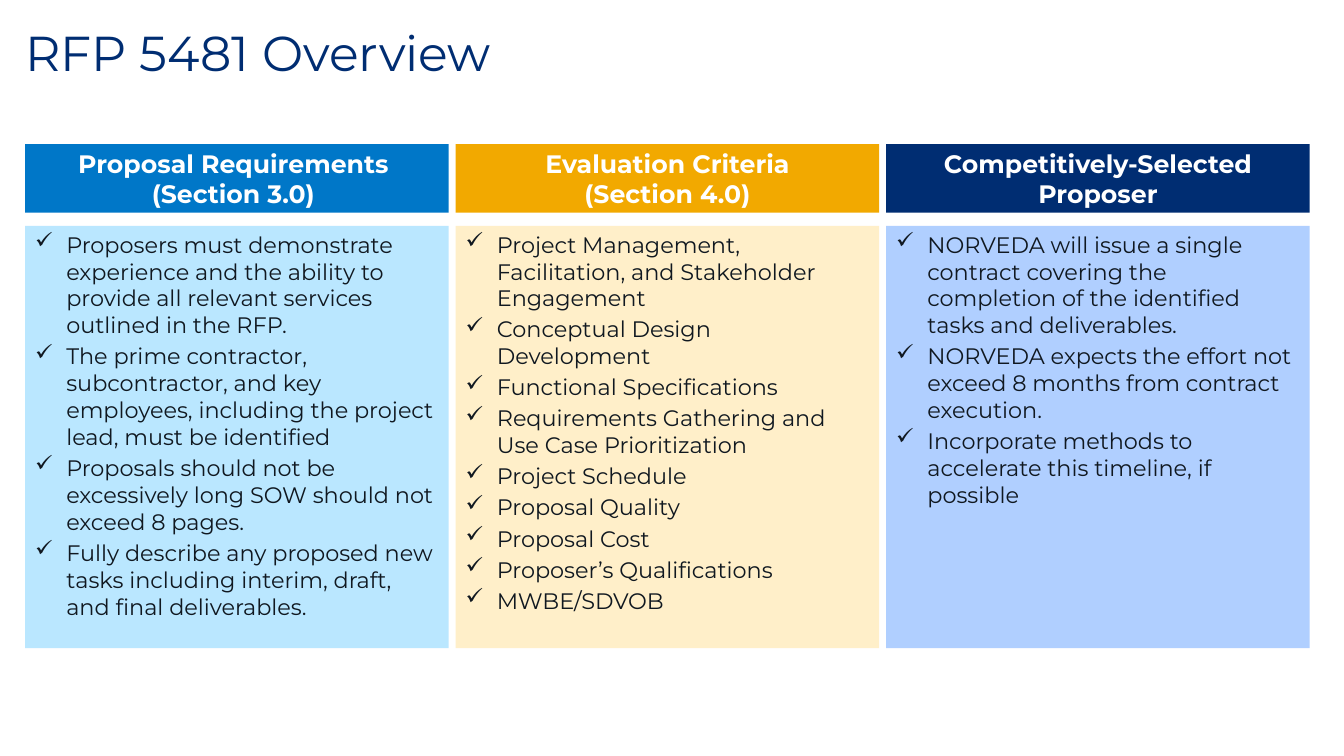
from lxml.etree import SubElement
from pptx import Presentation
from pptx.dml.color import RGBColor
from pptx.enum.shapes import MSO_SHAPE
from pptx.enum.text import MSO_ANCHOR, PP_ALIGN
from pptx.oxml.ns import qn
from pptx.util import Inches, Pt

NAVY = RGBColor(0x00, 0x2D, 0x72)
BLUE = RGBColor(0x00, 0x77, 0xC8)
GOLD = RGBColor(0xF2, 0xA9, 0x00)
SKY = RGBColor(0xBA, 0xE7, 0xFF)
CREAM = RGBColor(0xFF, 0xEF, 0xC9)
PALE = RGBColor(0xB0, 0xCF, 0xFF)
INK = RGBColor(0x10, 0x18, 0x20)
WHITE = RGBColor(0xFF, 0xFF, 0xFF)

LEFT, STEP, WIDTH = 0.25, 4.27, 4.2

COLUMNS = [
    (BLUE, SKY, ["Proposal Requirements ", "(Section 3.0) "], [
        "Proposers must demonstrate experience and the ability to provide "
        "all relevant services outlined in the RFP.",
        "The prime contractor, subcontractor, and key employees, including "
        "the project lead, must be identified",
        "Proposals should not be excessively long SOW should not exceed 8 pages.",
        "Fully describe any proposed new tasks including interim, draft, "
        "and final deliverables.",
    ]),
    (GOLD, CREAM, ["Evaluation Criteria", "(Section 4.0)"], [
        "Project Management, Facilitation, and Stakeholder Engagement",
        "Conceptual Design Development",
        "Functional Specifications",
        "Requirements Gathering and Use Case Prioritization",
        "Project Schedule",
        "Proposal Quality",
        "Proposal Cost",
        "Proposer’s Qualifications",
        "MWBE/SDVOB",
    ]),
    (NAVY, PALE, ["Competitively-Selected Proposer"], [
        "NORVEDA will issue a single contract covering the completion of "
        "the identified tasks and deliverables.",
        "NORVEDA expects the effort not exceed 8 months from contract execution.",
        "Incorporate methods to accelerate this timeline, if possible",
    ]),
]


def write(shape, lines, size, color, bold=False, align=PP_ALIGN.LEFT,
          anchor=MSO_ANCHOR.TOP, check=False):
    """Fill a shape with one paragraph per line, ticked if check is set."""
    frame = shape.text_frame
    frame.word_wrap = True
    frame.vertical_anchor = anchor
    for i, line in enumerate(lines):
        para = frame.add_paragraph() if i else frame.paragraphs[0]
        para.alignment = align
        run = para.add_run()
        run.text = line
        run.font.name = "Montserrat"
        run.font.size = Pt(size)
        run.font.bold = bold
        run.font.color.rgb = color
        if check:
            para.space_before = Pt(3)
            props = para._p.get_or_add_pPr()
            props.set("marL", str(Inches(0.31)))
            props.set("indent", str(-Inches(0.31)))
            SubElement(props, qn("a:buChar"), char="✓")
    return frame


def block(left, top, height, color):
    rect = slide.shapes.add_shape(MSO_SHAPE.RECTANGLE, Inches(left), Inches(top),
                                  Inches(WIDTH), Inches(height))
    rect.shadow.inherit = False
    rect.fill.solid()
    rect.fill.fore_color.rgb = color
    rect.line.fill.background()
    return rect


prs = Presentation()
prs.slide_width = Inches(13.33)
prs.slide_height = Inches(7.5)
slide = prs.slides.add_slide(prs.slide_layouts[6])

title = slide.shapes.add_textbox(Inches(LEFT), Inches(0.29), Inches(12.74), Inches(1))
frame = write(title, ["RFP 5481 Overview"], 35, NAVY)
frame.margin_left = frame.margin_right = frame.margin_top = frame.margin_bottom = 0
frame.paragraphs[0].line_spacing = 0.9

for i, (dark, light, head, items) in enumerate(COLUMNS):
    left = LEFT + i * STEP
    write(block(left, 1.43, 0.68, dark), head, 18, WHITE, bold=True,
          align=PP_ALIGN.CENTER, anchor=MSO_ANCHOR.MIDDLE)
    write(block(left, 2.24, 4.19, light), items, 16, INK, check=True)

prs.save("out.pptx")
